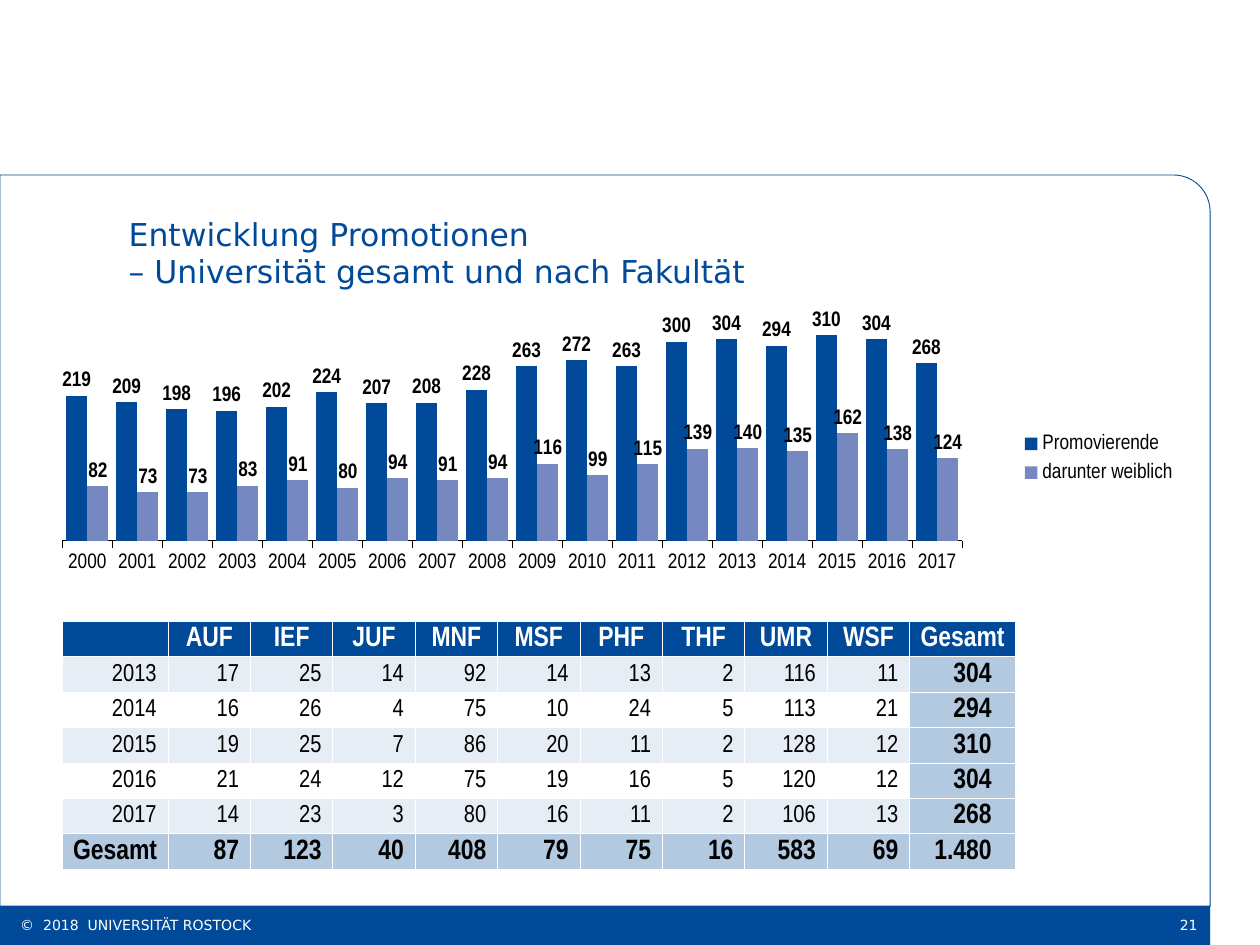
import math
from dataclasses import dataclass

from lxml import etree
from pptx import Presentation
from pptx.chart.data import CategoryChartData
from pptx.dml.color import RGBColor
from pptx.enum.chart import (XL_CHART_TYPE, XL_LABEL_POSITION, XL_LEGEND_POSITION,
                             XL_TICK_LABEL_POSITION, XL_TICK_MARK)
from pptx.enum.shapes import MSO_SHAPE
from pptx.enum.text import MSO_ANCHOR, MSO_AUTO_SIZE, PP_ALIGN
from pptx.oxml.ns import qn
from pptx.util import Pt

CLUSTERED = XL_CHART_TYPE.COLUMN_CLUSTERED
OUTSIDE_END = XL_LABEL_POSITION.OUTSIDE_END
LEGEND_RIGHT = XL_LEGEND_POSITION.RIGHT
NO_LABELS = XL_TICK_LABEL_POSITION.NONE
TICK_NONE, TICK_OUTSIDE = XL_TICK_MARK.NONE, XL_TICK_MARK.OUTSIDE
RECTANGLE = MSO_SHAPE.RECTANGLE
MIDDLE = MSO_ANCHOR.MIDDLE
NO_AUTOFIT = MSO_AUTO_SIZE.NONE
LEFT, CENTER, RIGHT = PP_ALIGN.LEFT, PP_ALIGN.CENTER, PP_ALIGN.RIGHT


@dataclass(frozen=True)
class Theme:
    """Colours, fonts and type sizes of the slide."""
    blue: RGBColor = RGBColor(0x00, 0x4A, 0x99)
    lilac: RGBColor = RGBColor(0x75, 0x88, 0xBF)
    band: RGBColor = RGBColor(0xE6, 0xED, 0xF5)
    total: RGBColor = RGBColor(0xB3, 0xC9, 0xE0)
    black: RGBColor = RGBColor(0, 0, 0)
    white: RGBColor = RGBColor(0xFF, 0xFF, 0xFF)
    sans: str = "DejaVu Sans"
    narrow: str = "Arial Narrow"
    title_size: float = 18
    footer_size: float = 8
    chart_size: float = 12
    body_size: float = 14
    strong_size: float = 16


THEME = Theme()

YEARS = [str(year) for year in range(2000, 2018)]
SERIES = [
    ("Promovierende", THEME.blue,
     [219, 209, 198, 196, 202, 224, 207, 208, 228,
      263, 272, 263, 300, 304, 294, 310, 304, 268]),
    ("darunter weiblich", THEME.lilac,
     [82, 73, 73, 83, 91, 80, 94, 91, 94,
      116, 99, 115, 139, 140, 135, 162, 138, 124]),
]
FACULTY_ROWS = [
    ["", "AUF", "IEF", "JUF", "MNF", "MSF", "PHF", "THF", "UMR", "WSF", "Gesamt"],
    ["2013", "17", "25", "14", "92", "14", "13", "2", "116", "11", "304"],
    ["2014", "16", "26", "4", "75", "10", "24", "5", "113", "21", "294"],
    ["2015", "19", "25", "7", "86", "20", "11", "2", "128", "12", "310"],
    ["2016", "21", "24", "12", "75", "19", "16", "5", "120", "12", "304"],
    ["2017", "14", "23", "3", "80", "16", "11", "2", "106", "13", "268"],
    ["Gesamt", "87", "123", "40", "408", "79", "75", "16", "583", "69", "1.480"],
]


def style_font(font, name, size, color, bold=False):
    """Set typeface, size, colour and weight of a font."""
    font.name, font.size, font.bold = name, Pt(size), bold
    font.color.rgb = color


def set_margins(target, left, top, right, bottom):
    """Set the inner margins of a text frame or table cell."""
    target.margin_left, target.margin_top = Pt(left), Pt(top)
    target.margin_right, target.margin_bottom = Pt(right), Pt(bottom)


def add_frame(slide, left, top, width, height, radius=21):
    """Draw the outline with its rounded top right corner."""
    right, bottom = left + width, top + height
    angles = [math.radians(90 - 7.5 * step) for step in range(13)]
    corner = [(right - radius + radius * math.cos(angle),
               top + radius - radius * math.sin(angle)) for angle in angles]
    points = corner + [(right, bottom), (left, bottom)]
    builder = slide.shapes.build_freeform(Pt(left), Pt(top), scale=1.0)
    builder.add_line_segments([(Pt(x), Pt(y)) for x, y in points], close=True)
    shape = builder.convert_to_shape()
    shape.shadow.inherit = False
    shape.fill.background()
    shape.line.color.rgb = THEME.blue
    shape.line.width = Pt(0.5)


def add_footer_text(slide, box, text, alignment, left_margin):
    """Place one white line of text on the footer bar."""
    frame = slide.shapes.add_textbox(*map(Pt, box)).text_frame
    frame.word_wrap = True
    frame.vertical_anchor = MIDDLE
    set_margins(frame, left_margin, 3.6, 7.2, 3.6)
    paragraph = frame.paragraphs[0]
    paragraph.alignment = alignment
    run = paragraph.add_run()
    run.text = text
    style_font(run.font, THEME.sans, THEME.footer_size, THEME.white)


def add_footer(slide, left, top, width, height):
    """Draw the footer bar with copyright and page number."""
    bar = slide.shapes.add_shape(RECTANGLE, Pt(left), Pt(top), Pt(width), Pt(height))
    bar.shadow.inherit = False
    bar.fill.solid()
    bar.fill.fore_color.rgb = THEME.blue
    bar.line.fill.background()
    add_footer_text(slide, (left + 11.5, top - 0.5, 610.5, height),
                    "©  2018  UNIVERSITÄT ROSTOCK", LEFT, 0)
    add_footer_text(slide, (left + width - 55.5, top - 0.5, 55.5, height), "21", RIGHT, 7.2)


def set_title(slide, left, top, width, height):
    """Move, fill and format the title placeholder."""
    title = slide.shapes.title
    title.left, title.top, title.width, title.height = map(Pt, (left, top, width, height))
    frame = title.text_frame
    frame.auto_size = NO_AUTOFIT
    frame.word_wrap = True
    frame.vertical_anchor = MIDDLE
    set_margins(frame, 0, 0, 7.2, 20)
    paragraph = frame.paragraphs[0]
    paragraph.alignment = LEFT
    for index, line in enumerate(("Entwicklung Promotionen",
                                  "– Universität gesamt und nach Fakultät")):
        if index:
            paragraph.add_line_break()
        run = paragraph.add_run()
        run.text = line
        style_font(run.font, THEME.sans, THEME.title_size, THEME.blue)


def set_layout(element, before, inner, x, y, w, h):
    """Give a chart part a fixed place, as fractions of the chart."""
    for old in element.findall(qn("c:layout")):
        element.remove(old)
    layout = etree.Element(qn("c:layout"))
    manual = etree.SubElement(layout, qn("c:manualLayout"))
    values = [("layoutTarget", "inner")] if inner else []
    values += [("xMode", "edge"), ("yMode", "edge"), ("x", x), ("y", y), ("w", w), ("h", h)]
    for tag, value in values:
        etree.SubElement(manual, qn(f"c:{tag}"), val=str(value))
    element.find(qn(before)).addprevious(layout)


def add_doctorate_chart(slide, left, top, width, height):
    """Add the column chart of doctorates per year."""
    data = CategoryChartData()
    data.categories = YEARS
    for name, _, values in SERIES:
        data.add_series(name, values)
    chart = slide.shapes.add_chart(CLUSTERED, Pt(left), Pt(top), Pt(width), Pt(height), data).chart
    chart.has_title = False
    style_font(chart.font, THEME.narrow, THEME.chart_size, THEME.black)
    plot = chart.plots[0]
    plot.gap_width, plot.overlap, plot.vary_by_categories = 36, 0, False
    for series, (_, color, _) in zip(plot.series, SERIES):
        series.format.fill.solid()
        series.format.fill.fore_color.rgb = color
        labels = series.data_labels
        labels.show_value = True
        labels.position = OUTSIDE_END
        style_font(labels.font, THEME.narrow, THEME.chart_size, THEME.black, True)
    years, counts = chart.category_axis, chart.value_axis
    years.major_tick_mark = TICK_OUTSIDE
    years.format.line.color.rgb = THEME.black
    years.format.line.width = Pt(0.25)
    counts.minimum_scale, counts.maximum_scale, counts.major_unit = 0, 310, 100
    counts.tick_label_position = NO_LABELS
    counts.major_tick_mark = TICK_NONE
    counts.format.line.fill.background()
    counts.major_gridlines.format.line.color.rgb = THEME.white
    counts.major_gridlines.format.line.width = Pt(0.25)
    chart.has_legend = True
    chart.legend.position = LEGEND_RIGHT
    chart.legend.include_in_layout = False
    style_font(chart.legend.font, THEME.narrow, THEME.chart_size, THEME.black)
    plot_area = chart._chartSpace.chart.plotArea
    set_layout(plot_area, "c:barChart", True, 0, 0.1, 0.79, 0.71)
    set_layout(chart.legend._element, "c:overlay", False, 0.83, 0.41, 0.16, 0.23)


def add_borders(cell):
    """Draw thin white lines around a table cell."""
    properties = cell._tc.get_or_add_tcPr()
    for tag in ("a:lnL", "a:lnR", "a:lnT", "a:lnB"):
        line = etree.SubElement(properties, qn(tag), w=str(Pt(0.5)))
        fill = etree.SubElement(line, qn("a:solidFill"))
        etree.SubElement(fill, qn("a:srgbClr"), val=str(THEME.white))


def format_cell(cell, text, row, column, last_row, last_column):
    """Write one table cell and style it by its place."""
    header, total = row == 0, row == last_row or column == last_column
    centered = header or (row == last_row and column == 0)
    add_borders(cell)
    color = THEME.blue if header else THEME.total if total else THEME.band if row % 2 else None
    if color is None:
        cell.fill.background()
    else:
        cell.fill.solid()
        cell.fill.fore_color.rgb = color
    cell.vertical_anchor = MIDDLE
    right = 0.7 if centered else 13.7 if column == last_column else 6.5
    set_margins(cell, 0.7, 0.7, right, 0)
    paragraph = cell.text_frame.paragraphs[0]
    paragraph.alignment = CENTER if centered else RIGHT
    strong = header or total
    size = THEME.strong_size if strong else THEME.body_size
    if text:
        run = paragraph.add_run()
        run.text = text
        style_font(run.font, THEME.narrow, size, THEME.white if header else THEME.black, strong)
    else:
        etree.SubElement(paragraph._p, qn("a:endParaRPr"), sz=str(size * 100))


def add_faculty_table(slide, left, top, width, height, faculty_width=47.1):
    """Add the table of doctorates by year and faculty."""
    last_row, last_column = len(FACULTY_ROWS) - 1, len(FACULTY_ROWS[0]) - 1
    table = slide.shapes.add_table(last_row + 1, last_column + 1, Pt(left), Pt(top),
                                   Pt(width), Pt(height)).table
    table.first_row = table.horz_banding = False
    edge_width = (width - faculty_width * (last_column - 1)) / 2
    for index, column in enumerate(table.columns):
        column.width = Pt(edge_width if index in (0, last_column) else faculty_width)
    for row, texts in enumerate(FACULTY_ROWS):
        table.rows[row].height = Pt(height / (last_row + 1))
        for column, text in enumerate(texts):
            format_cell(table.cell(row, column), text, row, column, last_row, last_column)


def main():
    """Build and save the slide."""
    presentation = Presentation()
    presentation.slide_width, presentation.slide_height = Pt(720), Pt(540)
    slide = presentation.slides.add_slide(presentation.slide_layouts[5])
    add_frame(slide, 0, 100, 691.5, 418)
    add_footer(slide, 0, 517.5, 691.5, 22.5)
    set_title(slide, 73.5, 127.5, 597, 53.5)
    add_doctorate_chart(slide, 35.5, 175, 651, 165.5)
    add_faculty_table(slide, 35.5, 355, 545, 141.8)
    presentation.save("out.pptx")


if __name__ == "__main__":
    main()
